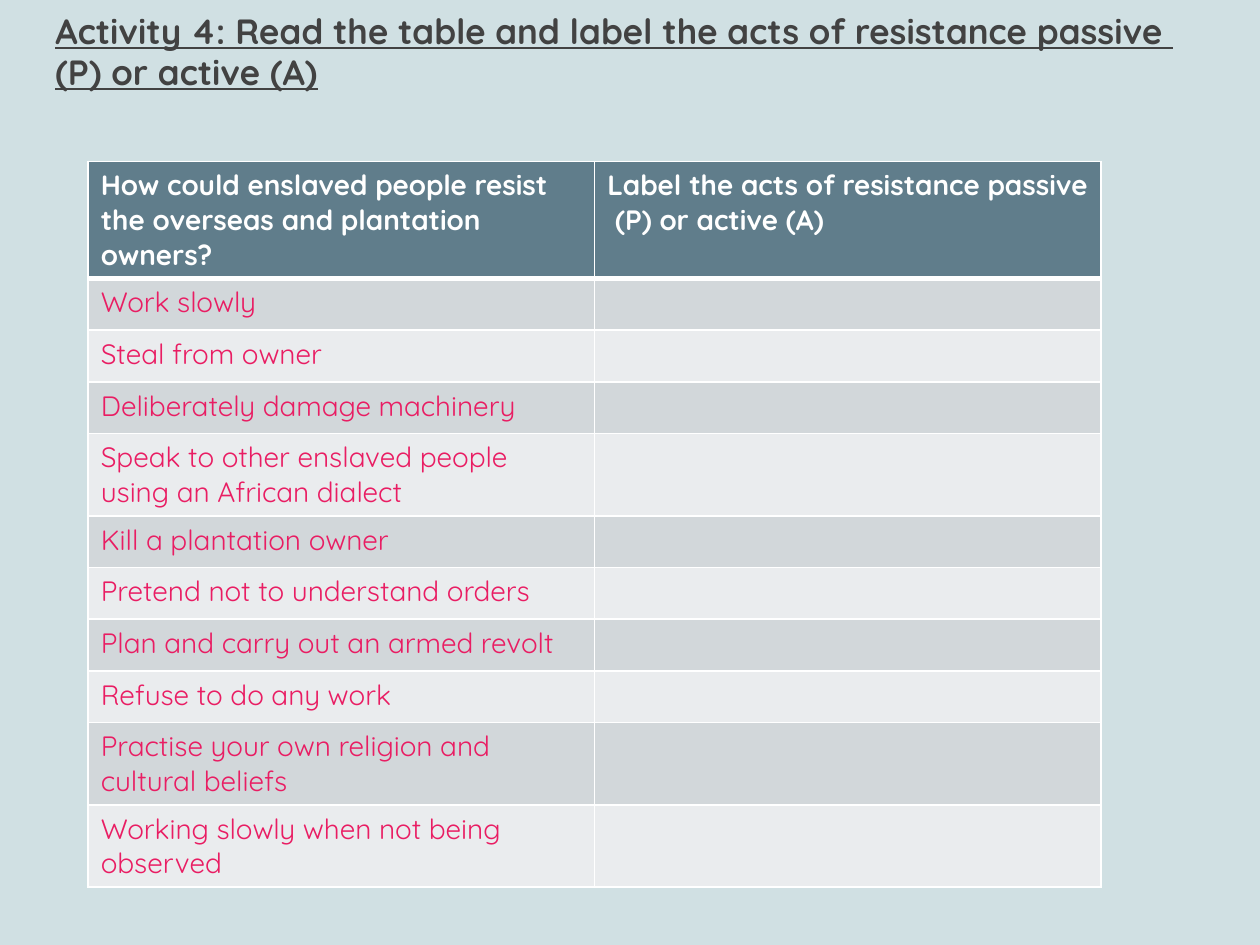
from lxml import etree
from pptx import Presentation
from pptx.dml.color import RGBColor
from pptx.enum.text import MSO_ANCHOR, MSO_AUTO_SIZE, PP_ALIGN
from pptx.oxml.ns import qn
from pptx.util import Inches, Pt

LEFT = PP_ALIGN.LEFT
BOTTOM = MSO_ANCHOR.BOTTOM
NO_FIT = MSO_AUTO_SIZE.NONE

TITLE = "Activity 4: Read the table and label the acts of resistance passive  (P) or active (A)"
HEADERS = [
    "How could enslaved people resist the overseas and plantation owners?",
    "Label the acts of resistance passive  (P) or active (A)",
]
ACTS = [
    "Work slowly",
    "Steal from owner",
    "Deliberately damage machinery",
    "Speak to other enslaved people using an African dialect",
    "Kill a plantation owner",
    "Pretend not to understand orders",
    "Plan and carry out an armed revolt",
    "Refuse to do any work",
    "Practise your own religion and cultural beliefs",
    "Working slowly when not being observed",
]
THEME = {
    "font": "Quicksand",
    "background": "D0E0E3",
    "title": "424242",
    "header": "607D8B",
    "bands": ["D2D7DA", "EAECEE"],
    "act": "E91D63",
    "white": "FFFFFF",
    "title_size": 20,
    "table_size": 16,
}
COL_WIDTH, ROW_HEIGHT = 4.02, 0.41


def write(tf, text, size, color, bold=False, underline=False, spacing=None):
    p = tf.paragraphs[0]
    p.alignment = LEFT
    if spacing:
        p.line_spacing = spacing
    r = p.add_run()
    r.text = text
    font = r.font
    font.name = THEME["font"]
    font.size = Pt(size)
    font.bold = bold
    font.underline = underline
    font.color.rgb = RGBColor.from_string(color)


def set_borders(cell, bottom):
    tc_pr = cell._tc.get_or_add_tcPr()
    widths = {"a:lnL": 1, "a:lnR": 1, "a:lnT": 1, "a:lnB": bottom}
    for index, (tag, width) in enumerate(widths.items()):
        line = etree.Element(qn(tag), w=str(Pt(width)))
        fill = etree.SubElement(line, qn("a:solidFill"))
        etree.SubElement(fill, qn("a:srgbClr"), val=THEME["white"])
        tc_pr.insert(index, line)


def format_cell(cell, text, fill, color, bold=False, bottom=1):
    cell.fill.solid()
    cell.fill.fore_color.rgb = RGBColor.from_string(fill)
    set_borders(cell, bottom)
    if text:
        write(cell.text_frame, text, THEME["table_size"], color, bold=bold)


def add_title(s):
    sp = s.shapes.title
    sp.left, sp.top, sp.width, sp.height = map(Inches, (0.34, 0.39, 9.39, 1.1))
    tf = sp.text_frame
    tf.word_wrap = True
    tf.auto_size = NO_FIT
    tf.vertical_anchor = BOTTOM
    tf.margin_left = tf.margin_right = Inches(0.1)
    tf.margin_top, tf.margin_bottom = Inches(0), Inches(0.75)
    write(tf, TITLE, THEME["title_size"], THEME["title"],
          bold=True, underline=True, spacing=0.96)


def add_acts_table(s):
    rows, cols = len(ACTS) + 1, len(HEADERS)
    table = s.shapes.add_table(
        rows, cols, Inches(0.7), Inches(1.28),
        Inches(COL_WIDTH * cols), Inches(ROW_HEIGHT * rows)).table
    for column in table.columns:
        column.width = Inches(COL_WIDTH)
    for row in table.rows:
        row.height = Inches(ROW_HEIGHT)
    for col, header in enumerate(HEADERS):
        format_cell(table.cell(0, col), header, THEME["header"], THEME["white"],
                    bold=True, bottom=3)
    for i, act in enumerate(ACTS):
        for col, text in enumerate([act, ""]):
            format_cell(table.cell(i + 1, col), text, THEME["bands"][i % 2], THEME["act"])


def main():
    prs = Presentation()
    prs.slide_width, prs.slide_height = Inches(10), Inches(7.5)
    s = prs.slides.add_slide(prs.slide_layouts[5])
    s.background.fill.solid()
    s.background.fill.fore_color.rgb = RGBColor.from_string(THEME["background"])
    add_title(s)
    add_acts_table(s)
    prs.save("out.pptx")


if __name__ == "__main__":
    main()
